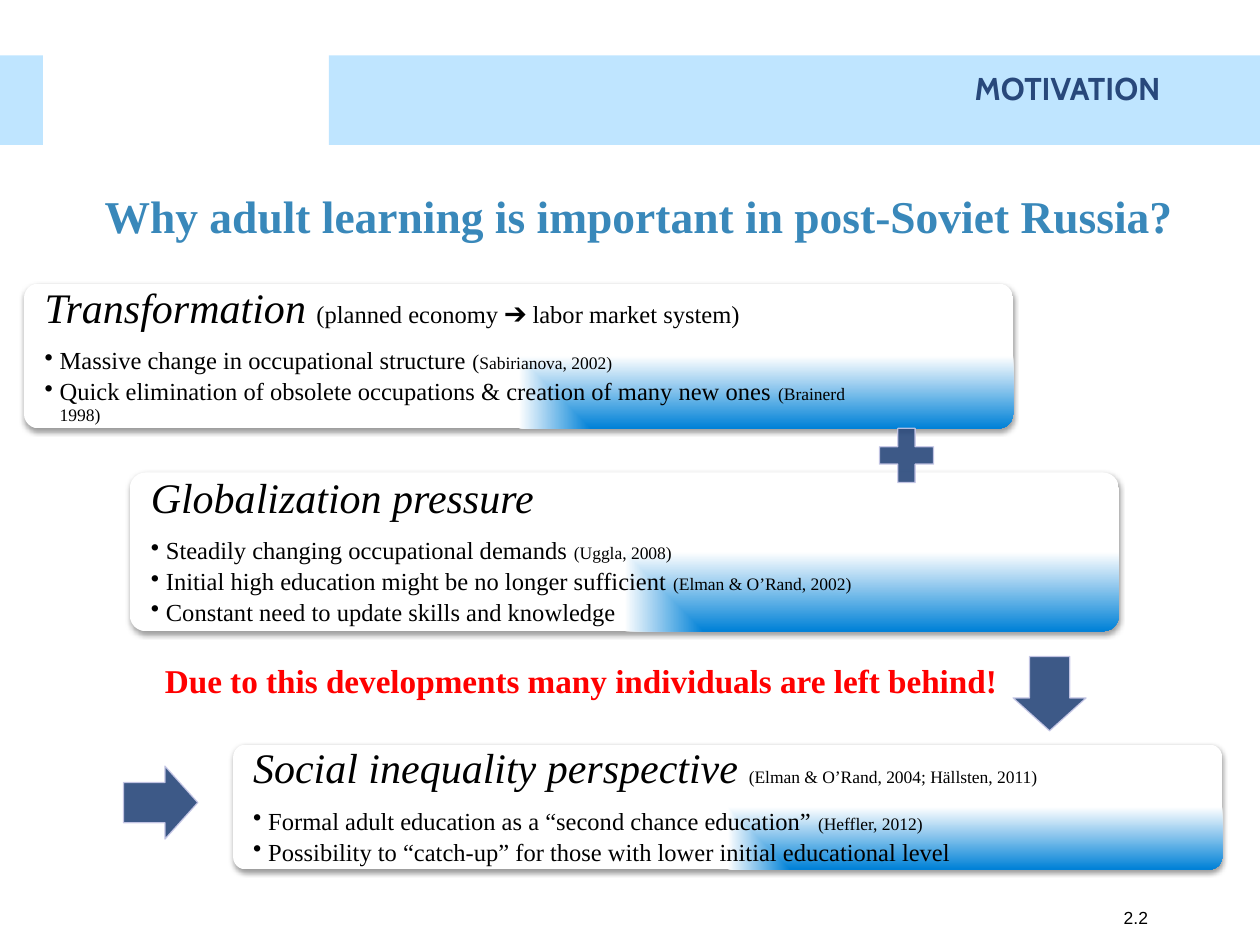
from pptx import Presentation, util as u
from pptx.dml.color import RGBColor
from pptx.enum import shapes, text
from pptx.oxml import parse_xml
from pptx.oxml.ns import nsdecls, qn
from lxml import etree

BLACK = RGBColor(0x00, 0x00, 0x00)
RED = RGBColor(0xFF, 0x00, 0x00)
SKY = RGBColor(0x00, 0x99, 0xFF)
BLUE = RGBColor(0x00, 0x81, 0xD7)
TITLE_BLUE = RGBColor(0x39, 0x88, 0xBA)
NAVY = RGBColor(0x28, 0x48, 0x7B)
LAVENDER = RGBColor(0xC9, 0xC9, 0xE8)
WHITE = RGBColor(0xFF, 0xFF, 0xFF)

SERIF = "Times New Roman"
COLUMNS, ROWS = 100, 75
HEAD, BODY, CITE = 24, 14, 10

# (column, row, height), right inset, heading runs, bullets; a run is (text, size)
CARDS = [
    ((1.9, 22.5, 11.5), 11.8,
     [("Transformation ", HEAD), ("(planned economy ➔ labor market system)", BODY)],
     [[("Massive change in occupational structure ", BODY), ("(", 12), ("Sabirianova, 2002)", CITE)],
      [("Quick elimination of obsolete occupations & creation of many new ones ", BODY),
       ("(Brainerd 1998)", CITE)]]),
    ((10.3, 37.5, 12.6), 14,
     [("Globalization pressure", HEAD)],
     [[("Steadily changing occupational demands ", BODY), ("(Uggla, 2008)", CITE)],
      [("Initial high education might be no longer sufficient ", BODY),
       ("(Elman & O’Rand, 2002)", CITE)],
      [("Constant need to update skills and knowledge", BODY)]]),
    ((18.5, 59.1, 9.9), 14,
     [("Social inequality perspective ", HEAD), ("(Elman & O’Rand, 2004; Hällsten, 2011)", CITE)],
     [[("Formal adult education as a “second chance education” ", BODY), ("(Heffler, 2012)", CITE)],
      [("Possibility to “catch-up” for those with lower initial educational level", BODY)]]),
]
CARD_WIDTH = 78.5


class SlideBuilder:
    def __init__(self, presentation):
        self.slide = presentation.slides.add_slide(presentation.slide_layouts[6])
        self.column = presentation.slide_width / COLUMNS
        self.row = presentation.slide_height / ROWS

    def place(self, column, row, width, height):
        return (round(column * self.column), round(row * self.row),
                round(width * self.column), round(height * self.row))

    def shape(self, kind, area, adjustments=()):
        shape = self.slide.shapes.add_shape(kind, *self.place(*area))
        shape.shadow.inherit = False
        shape.line.fill.background()
        for index, value in enumerate(adjustments):
            shape.adjustments[index] = value
        return shape

    def solid(self, shape, color, opacity, outline=None):
        """Colour fill and outline, both at the given percentage of opacity."""
        parts = [(shape.fill, color)]
        if outline is not None:
            shape.line.width = u.Pt(0.75)
            parts.append((shape.line.fill, outline))
        for fill, shade in parts:
            fill.solid()
            fill.fore_color.rgb = shade
        for color_element in shape._element.spPr.iter(qn("a:srgbClr")):
            etree.SubElement(color_element, qn("a:alpha"), val=str(opacity * 1000))

    def bar(self, area):
        self.solid(self.shape(shapes.MSO_SHAPE.RECTANGLE, area), SKY, 25)

    def icon(self, kind, area, adjustments):
        self.solid(self.shape(kind, area, adjustments), NAVY, 90, LAVENDER)

    def frame(self, shape, insets, anchor):
        """Prepare the text frame; insets are left, top, right, bottom in columns."""
        frame = shape.text_frame
        frame.word_wrap = True
        frame.vertical_anchor = anchor
        (frame.margin_left, frame.margin_top, frame.margin_right,
         frame.margin_bottom) = [round(inset * self.column) for inset in insets]
        return frame

    def label(self, area, words, size, color, font=SERIF, bold=True, insets=(1, 0.5, 1, 0.5),
              anchor=text.MSO_ANCHOR.MIDDLE, align=text.PP_ALIGN.LEFT, spacing=1.0):
        box = self.slide.shapes.add_textbox(*self.place(*area))
        paragraph = self.frame(box, insets, anchor).paragraphs[0]
        paragraph.text = words
        paragraph.alignment = align
        paragraph.line_spacing = spacing
        style = paragraph.runs[0].font
        style.name, style.size, style.bold = font, u.Pt(size), bold
        style.color.rgb = color

    def add_runs(self, paragraph, runs, space_after):
        paragraph.alignment = text.PP_ALIGN.LEFT
        paragraph.line_spacing = 0.9
        paragraph.space_after = u.Pt(space_after)
        for words, size in runs:
            run = paragraph.add_run()
            run.text = words
            run.font.name, run.font.size = SERIF, u.Pt(size)
            run.font.italic = size == HEAD
            run.font.color.rgb = BLACK

    def bullet(self, paragraph):
        properties = paragraph._p.get_or_add_pPr()
        hang = round(1.2 * self.column)
        properties.set("marL", str(hang))
        properties.set("indent", str(-hang))
        etree.SubElement(properties, qn("a:buChar"), char="•")

    def card(self, position, right_inset, heading, bullets):
        column, row, height = position
        card = self.shape(shapes.MSO_SHAPE.ROUNDED_RECTANGLE,
                          (column, row, CARD_WIDTH, height), [0.1])
        self.shade(card)
        frame = self.frame(card, (1.3, 1.3, right_inset, 1.3), text.MSO_ANCHOR.MIDDLE)
        self.add_runs(frame.paragraphs[0], heading, 9.5)
        for runs in bullets:
            paragraph = frame.add_paragraph()
            self.bullet(paragraph)
            self.add_runs(paragraph, runs, 2.5)

    def shade(self, shape):
        """Shade from blue in the lower right corner to white, with a soft shadow."""
        shape.fill.background()
        properties = shape._element.spPr
        gradient = parse_xml(
            f'<a:gradFill {nsdecls("a")} rotWithShape="1"><a:gsLst>'
            f'<a:gs pos="0"><a:srgbClr val="{BLUE}"/></a:gs>'
            f'<a:gs pos="100000"><a:srgbClr val="{WHITE}"/></a:gs></a:gsLst>'
            '<a:path path="rect"><a:fillToRect l="100000" t="100000"/></a:path></a:gradFill>')
        properties.replace(properties.find(qn("a:noFill")), gradient)
        properties.find(qn("a:effectLst")).append(parse_xml(
            f'<a:outerShdw {nsdecls("a")} blurRad="40000" dist="20000" dir="5400000" '
            f'rotWithShape="0"><a:srgbClr val="{BLACK}"><a:alpha val="38000"/></a:srgbClr>'
            '</a:outerShdw>'))


def main():
    presentation = Presentation()
    presentation.slide_width, presentation.slide_height = u.Inches(10), u.Inches(7.5)
    builder = SlideBuilder(presentation)

    header = (26.1, 4.4, 73.9, 7.1)
    builder.bar(header)
    builder.bar((0, 4.4, 3.4, 7.1))
    builder.label((4.3, 13.1, 92.9, 7.9), "Why adult learning is important in post-Soviet Russia?",
                  26, TITLE_BLUE, align=text.PP_ALIGN.CENTER)
    builder.label((88.2, 71.5, 11.8, 3.5), "2.2", 10, BLACK, font="Arial", bold=False,
                  anchor=text.MSO_ANCHOR.TOP)
    for card in CARDS:
        builder.card(*card)
    builder.label((12.1, 51.2, 85.2, 6), "Due to this developments many individuals are left behind!",
                  19, RED, insets=(1, 1, 14.7, 1), spacing=0.9)

    builder.icon(shapes.MSO_SHAPE.CROSS, (69.8, 34, 4.3, 4.3), [0.34])
    builder.icon(shapes.MSO_SHAPE.DOWN_ARROW, (80.4, 52.1, 5.8, 5.9), [0.55, 0.45])
    builder.icon(shapes.MSO_SHAPE.RIGHT_ARROW, (9.8, 60.8, 5.9, 5.8), [0.55, 0.45])
    builder.label(header, "MOTIVATION", 18, NAVY, font="Cabin", insets=(1, 0.5, 7.9, 0.1),
                  anchor=text.MSO_ANCHOR.TOP, align=text.PP_ALIGN.RIGHT, spacing=1.2)
    presentation.save("out.pptx")


if __name__ == "__main__":
    main()
